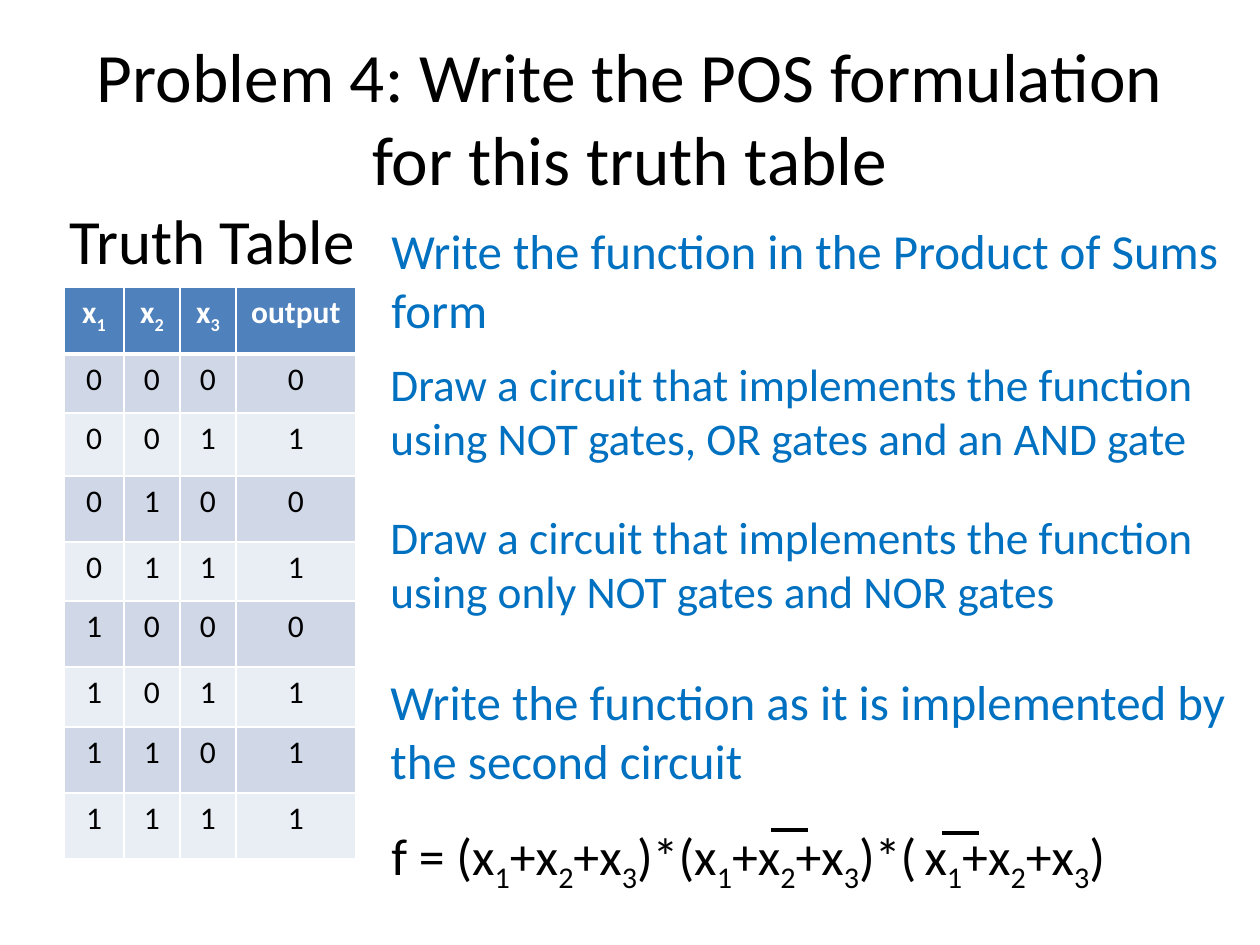
from dataclasses import dataclass
from itertools import product

from lxml import etree
from pptx import Presentation
from pptx import util as u
from pptx.dml.color import RGBColor
from pptx.enum import shapes, text
from pptx.oxml import ns


@dataclass(frozen=True)
class Theme:
    font: str = "Calibri"
    ink: str = "000000"
    prompt: str = "0070C0"
    white: str = "FFFFFF"
    header: str = "4F81BD"
    bands: tuple = ("D0D8E8", "E9EDF4")
    title_size: float = 39.6
    caption_size: float = 36
    large_size: float = 28
    medium_size: float = 25.9
    formula_size: float = 29.6
    gap_size: float = 20.4
    cell_size: float = 18


@dataclass(frozen=True)
class Box:
    left: int
    top: int
    width: int
    height: int


@dataclass(frozen=True)
class Prompt:
    box: Box
    wording: str
    size: float


THEME = Theme()
PX_PER_INCH = 126

COLUMN_WIDTHS = (60, 56, 56, 120)
ROW_HEIGHTS = (67, 59, 63, 66, 59, 66, 60, 66, 66)
HEADINGS = ("x_1", "x_2", "x_3", "output")
OUTPUTS = "01010111"

PROMPTS = (
    Prompt(Box(379, 214, 863, 120),
           "Write the function in the Product of Sums form", THEME.large_size),
    Prompt(Box(378, 350, 863, 139),
           "Draw a circuit that implements the function using NOT gates, "
           "OR gates and an AND gate", THEME.medium_size),
    Prompt(Box(378, 503, 863, 139),
           "Draw a circuit that implements the function using only "
           "NOT gates and NOR gates", THEME.medium_size),
    Prompt(Box(378, 665, 863, 139),
           "Write the function as it is implemented by the second circuit",
           THEME.large_size),
)

FORMULA = (
    ("f = (x_1+x_2+x_3)*(x_1+x_2+x_3)*(", THEME.formula_size),
    (" ", THEME.gap_size),
    ("x_1+x_2+x_3)", THEME.formula_size),
)
NEGATION_BARS = ((771, 830), (942, 833))
BAR_LENGTH = 37


def px(length: int) -> u.Emu:
    return u.Emu(round(length * u.Inches(1) / PX_PER_INCH))


def frame(box: Box) -> tuple:
    return px(box.left), px(box.top), px(box.width), px(box.height)


def style(span, size: float, color: str, bold: bool = False) -> None:
    span.font.name = THEME.font
    span.font.size = u.Pt(size)
    span.font.bold = bold
    span.font.color.rgb = RGBColor.from_string(color)


def add_spans(para, wording: str, size: float, color: str, bold: bool = False) -> None:
    """Add text in which an underscore makes the next character a subscript."""
    first, *rest = wording.split("_")
    parts = [(first, False)]
    for part in rest:
        parts += [(part[0], True), (part[1:], False)]
    for content, lowered in parts:
        if content:
            span = para.add_run()
            span.text = content
            style(span, size, color, bold)
            if lowered:
                span.font._element.set("baseline", "-25000")


def add_text(parent, box: Box, pieces: tuple, color: str) -> None:
    holder = parent.add_textbox(*frame(box))
    holder.text_frame.word_wrap = True
    for wording, size in pieces:
        add_spans(holder.text_frame.paragraphs[0], wording, size, color)


def add_bar(parent, left: int, top: int) -> None:
    bar = parent.add_connector(shapes.MSO_CONNECTOR.STRAIGHT,
                               px(left), px(top), px(left + BAR_LENGTH), px(top))
    bar.line.color.rgb = RGBColor.from_string(THEME.ink)
    bar.line.width = u.Pt(2)
    etree.SubElement(bar._element.spPr, ns.qn("a:effectLst"))


def set_borders(cell, top: int, bottom: int) -> None:
    properties = cell._tc.get_or_add_tcPr()
    widths = {"lnL": 1, "lnR": 1, "lnT": top, "lnB": bottom}
    for position, (side, points) in enumerate(widths.items()):
        line = etree.Element(ns.qn(f"a:{side}"), w=str(u.Pt(points)))
        fill = etree.SubElement(line, ns.qn("a:solidFill"))
        etree.SubElement(fill, ns.qn("a:srgbClr"), val=THEME.white)
        properties.insert(position, line)


def add_truth_table(page) -> None:
    box = Box(64, 287, sum(COLUMN_WIDTHS), sum(ROW_HEIGHTS))
    inputs = product("01", repeat=3)
    rows = [HEADINGS] + [(*bits, output) for bits, output in zip(inputs, OUTPUTS)]
    table = page.shapes.add_table(len(rows), len(HEADINGS), *frame(box)).table
    for column, width in zip(table.columns, COLUMN_WIDTHS):
        column.width = px(width)
    for index, (row, height, values) in enumerate(zip(table.rows, ROW_HEIGHTS, rows)):
        row.height = px(height)
        is_header = index == 0
        fill = THEME.header if is_header else THEME.bands[(index - 1) % 2]
        color = THEME.white if is_header else THEME.ink
        for cell, value in zip(row.cells, values):
            cell.fill.solid()
            cell.fill.fore_color.rgb = RGBColor.from_string(fill)
            set_borders(cell, 3 if index == 1 else 1, 3 if is_header else 1)
            para = cell.text_frame.paragraphs[0]
            para.alignment = text.PP_ALIGN.CENTER
            add_spans(para, value, THEME.cell_size, color, is_header)


def main() -> None:
    deck = Presentation()
    deck.slide_width, deck.slide_height = u.Inches(10), u.Inches(7.5)
    page = deck.slides.add_slide(deck.slide_layouts[5])

    # Title
    title = page.shapes.title
    title.left, title.top, title.width, title.height = frame(Box(63, 38, 1134, 157))
    title.text_frame.text = "Problem 4: Write the POS formulation for this truth table"
    para = title.text_frame.paragraphs[0]
    para.alignment = text.PP_ALIGN.CENTER
    style(para.runs[0], THEME.title_size, THEME.ink)

    # Truth table and its caption
    add_text(page.shapes, Box(43, 195, 331, 89),
             ((" Truth Table", THEME.caption_size),), THEME.ink)
    add_truth_table(page)

    # Formula with its negation bars
    formula = page.shapes.add_group_shape().shapes
    add_text(formula, Box(379, 818, 790, 74), FORMULA, THEME.ink)
    for left, top in NEGATION_BARS:
        add_bar(formula, left, top)

    # Task prompts
    for prompt in PROMPTS:
        add_text(page.shapes, prompt.box, ((prompt.wording, prompt.size),), THEME.prompt)

    deck.save("out.pptx")


if __name__ == "__main__":
    main()
